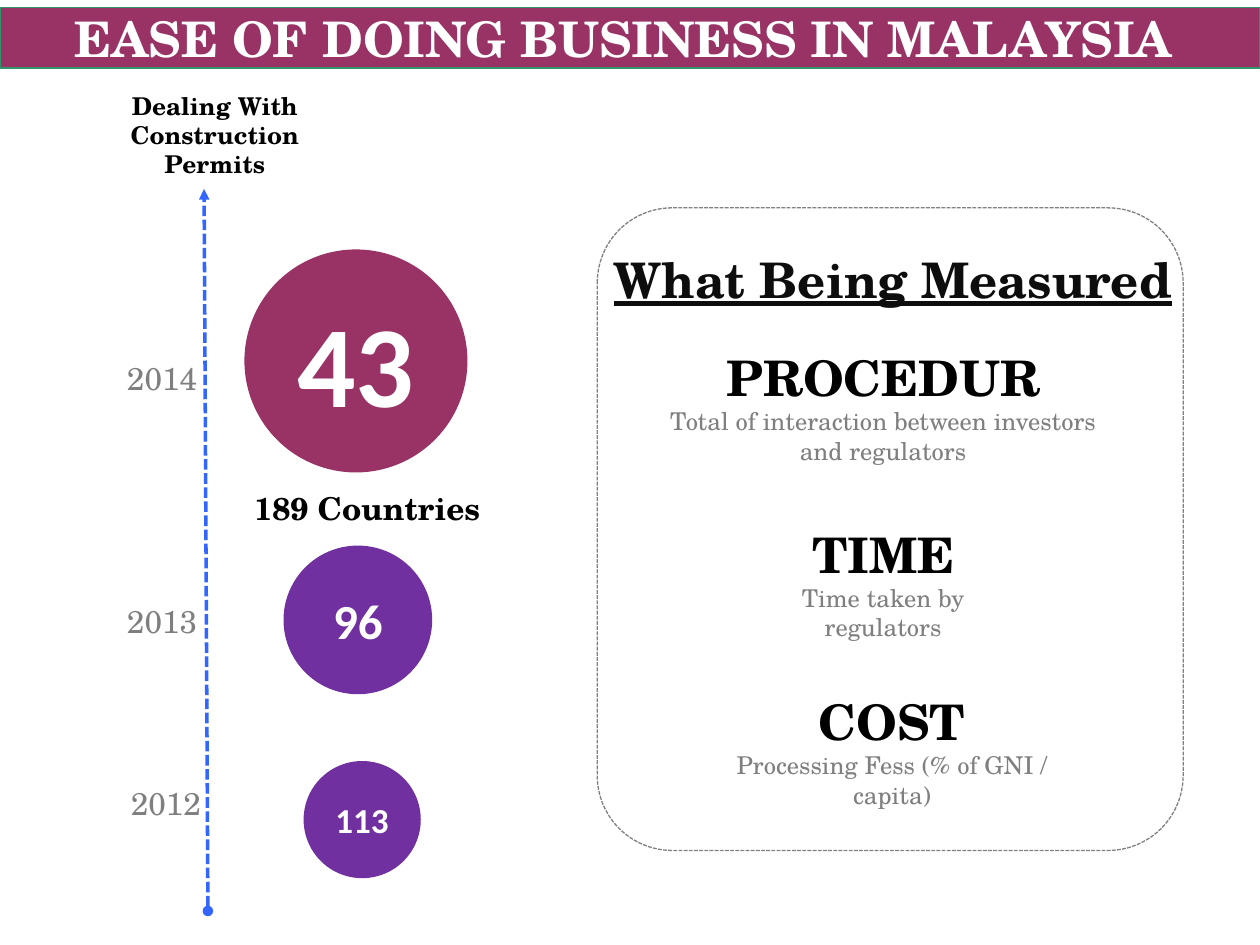
"""Build the slide on the ease of doing business in Malaysia."""
from dataclasses import dataclass

from lxml import etree
from pptx import Presentation
from pptx.dml.color import RGBColor
from pptx.enum.dml import MSO_LINE
from pptx.enum.shapes import MSO_CONNECTOR, MSO_SHAPE
from pptx.enum.text import MSO_ANCHOR, PP_ALIGN
from pptx.oxml.ns import qn
from pptx.util import Inches, Pt

OVAL, ROUNDED = MSO_SHAPE.OVAL, MSO_SHAPE.ROUNDED_RECTANGLE
STRAIGHT = MSO_CONNECTOR.STRAIGHT
SYS_DASH = MSO_LINE.SQUARE_DOT
LEFT, CENTER = PP_ALIGN.LEFT, PP_ALIGN.CENTER
MIDDLE = MSO_ANCHOR.MIDDLE
SERIF, SANS = "TeX Gyre Schola", "Calibri"
COLORS = {
    "plum": "993366",
    "purple": "7030A0",
    "blue": "3366FF",
    "green": "32946A",
    "border": "808080",
    "gray": "7F7F7F",
    "ink": "0D0D0D",
    "black": "000000",
    "white": "FFFFFF",
}


@dataclass
class Line:
    """One paragraph and its look."""
    text: str
    size: float
    color: str = "black"
    bold: bool = True
    underline: bool = False
    font: str = SERIF


@dataclass
class Box:
    """A text box."""
    left: float
    top: float
    width: float
    height: float
    lines: list[Line]
    align: PP_ALIGN = CENTER
    wrap: bool = True


@dataclass
class Rank:
    """A circle that shows the rank of one year."""
    left: float
    top: float
    diameter: float
    text: str
    size: float
    color: str = "purple"


@dataclass
class Measure:
    """A measured item with its explanation."""
    left: float
    top: float
    width: float
    height: float
    name: str
    detail: str


RANKS = [
    Rank(1.94, 1.98, 1.77, "43", 66, "plum"),
    Rank(2.25, 4.33, 1.18, "96", 28),
    Rank(2.41, 6.04, 0.93, "113", 20),
]
YEARS = [("2014", 0.91, 2.8), ("2013", 0.91, 4.73), ("2012", 0.94, 6.17)]
MEASURES = [
    Measure(5.16, 2.71, 3.7, 1.04, "PROCEDUR",
            "Total of interaction between investors and regulators"),
    Measure(5.83, 4.11, 2.36, 0.81, "TIME", "Time taken by regulators"),
    Measure(5.42, 5.44, 3.32, 0.81, "COST", "Processing Fess (% of GNI / capita)"),
]
LABELS = [
    Box(0.58, 0.67, 2.25, 0.81, [Line("Dealing With Construction Permits", 14)]),
    Box(1.92, 3.83, 2, 0.4, [Line("189 Countries", 18)], LEFT, False),
    Box(4.75, 1.93, 4.67, 0.57,
        [Line("What Being Measured", 28, "ink", underline=True)], wrap=False),
]


def rgb(name: str) -> RGBColor:
    """Look up a colour."""
    return RGBColor.from_string(COLORS[name])


def write(tf, lines: list[Line], align: PP_ALIGN = CENTER) -> None:
    """Fill a text frame with formatted paragraphs."""
    tf.text = "\n".join(line.text for line in lines)
    for p, line in zip(tf.paragraphs, lines):
        p.alignment = align
        font = p.runs[0].font
        font.name, font.size = line.font, Pt(line.size)
        font.bold, font.underline = line.bold, line.underline
        font.color.rgb = rgb(line.color)


def add_title(s, text: str) -> None:
    """Turn the title placeholder into the banner."""
    sp = s.shapes.title
    sp.left, sp.top, sp.width, sp.height = map(Inches, (0, 0.06, 10, 0.48))
    sp.fill.solid()
    sp.fill.fore_color.rgb = rgb("plum")
    sp.line.color.rgb = rgb("green")
    sp.line.width = Pt(0.75)
    tf = sp.text_frame
    tf.margin_left = tf.margin_right = Inches(0.07)
    tf.margin_top = tf.margin_bottom = Inches(0.04)
    tf.vertical_anchor = MIDDLE
    tf.word_wrap = False
    write(tf, [Line(text, 28, "white")])


def add_box(s, box: Box) -> None:
    """Add a text box."""
    sp = s.shapes.add_textbox(*map(Inches, (box.left, box.top, box.width, box.height)))
    sp.text_frame.word_wrap = box.wrap
    write(sp.text_frame, box.lines, box.align)


def add_rank(s, rank: Rank) -> None:
    """Add a rank circle."""
    sp = s.shapes.add_shape(
        OVAL, *map(Inches, (rank.left, rank.top, rank.diameter, rank.diameter)))
    sp.shadow.inherit = False
    sp.fill.solid()
    sp.fill.fore_color.rgb = rgb(rank.color)
    sp.line.fill.background()
    sp.text_frame.vertical_anchor = MIDDLE
    write(sp.text_frame, [Line(rank.text, rank.size, "white", font=SANS)])


def add_panel(s) -> None:
    """Add the dashed frame around the measures."""
    sp = s.shapes.add_shape(ROUNDED, *map(Inches, (4.74, 1.65, 4.65, 5.1)))
    sp.adjustments[0] = 0.128
    sp.shadow.inherit = False
    sp.fill.background()
    sp.line.color.rgb = rgb("border")
    sp.line.width = Pt(0.75)
    sp.line.dash_style = SYS_DASH


def add_timeline(s) -> None:
    """Add the dashed arrow that runs up through the years."""
    cxn = s.shapes.add_connector(STRAIGHT, *map(Inches, (1.65, 7.23, 1.62, 1.5)))
    cxn.line.color.rgb = rgb("blue")
    cxn.line.width = Pt(2)
    cxn.line.dash_style = SYS_DASH
    ln = cxn.line._get_or_add_ln()
    etree.SubElement(ln, qn("a:headEnd"), type="oval")
    etree.SubElement(ln, qn("a:tailEnd"), type="triangle")
    etree.SubElement(cxn._element.spPr, qn("a:effectLst"))


def main() -> None:
    """Build and save the presentation."""
    prs = Presentation()
    prs.slide_width, prs.slide_height = Inches(10), Inches(7.5)
    s = prs.slides.add_slide(prs.slide_layouts[5])
    add_title(s, "EASE OF DOING BUSINESS IN MALAYSIA ")
    add_timeline(s)
    add_panel(s)
    for rank in RANKS:
        add_rank(s, rank)
    for year, left, top in YEARS:
        add_box(s, Box(left, top, 0.76, 0.4, [Line(year, 18, "gray", False)], LEFT, False))
    for m in MEASURES:
        lines = [Line(m.name, 28), Line(m.detail, 14, "gray", False)]
        add_box(s, Box(m.left, m.top, m.width, m.height, lines))
    for label in LABELS:
        add_box(s, label)
    prs.save("out.pptx")


if __name__ == "__main__":
    main()
